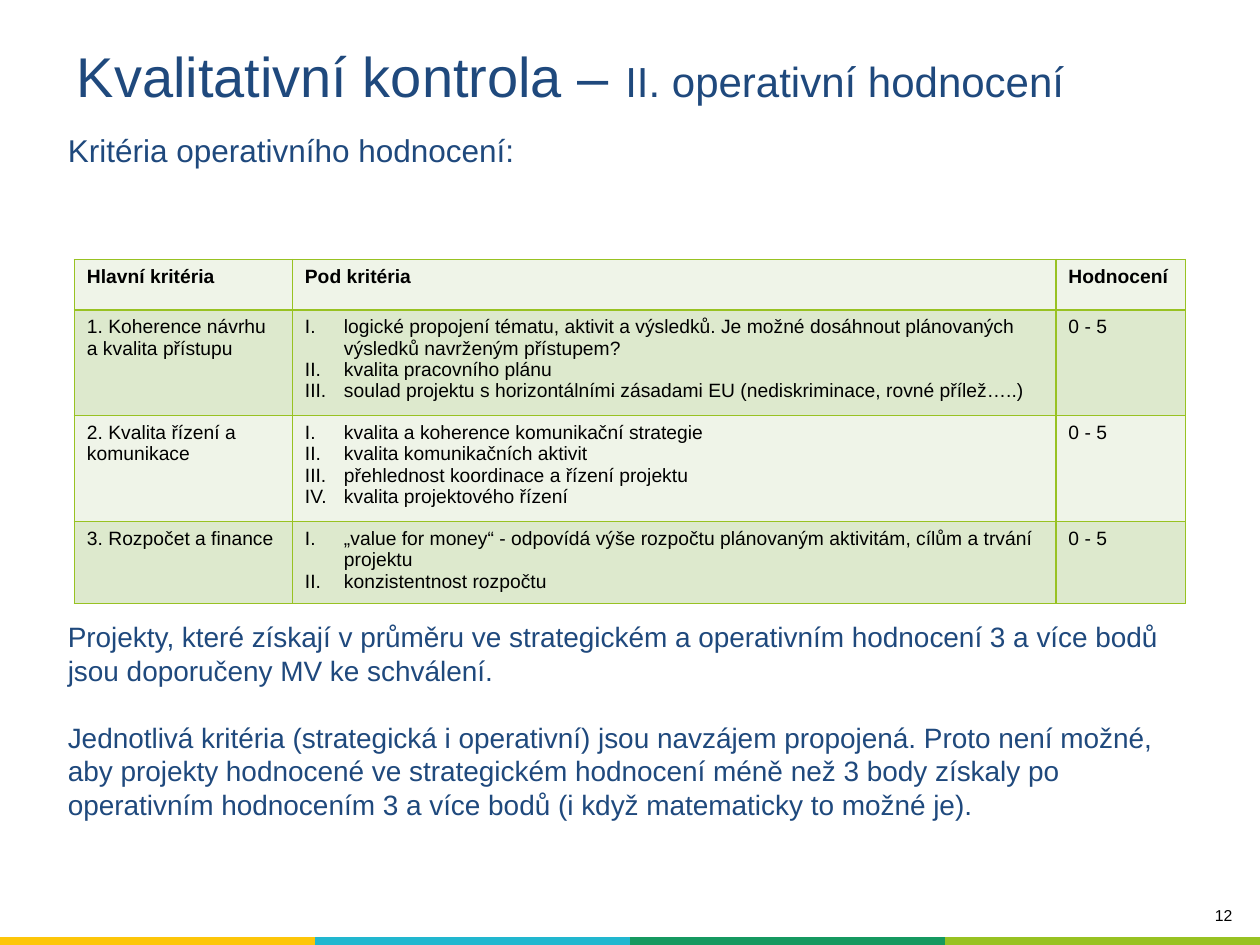
from lxml import etree
from pptx import Presentation
from pptx.dml.color import RGBColor
from pptx.enum import text
from pptx.oxml.ns import qn
from pptx.util import Inches, Pt

BLUE = RGBColor(0x1F, 0x49, 0x7D)
BLACK = RGBColor(0, 0, 0)
LIGHT = RGBColor(0xEF, 0xF4, 0xE8)
GREEN = RGBColor(0xDD, 0xE9, 0xCD)
LIME = RGBColor(0x98, 0xC2, 0x22)
STRIPE = [RGBColor(0xFD, 0xC6, 0x09), RGBColor(0x21, 0xB7, 0xCF),
          RGBColor(0x15, 0x99, 0x60), LIME]
PLAIN = "{2D5ABB26-0587-4C30-8999-92F81FD0307C}"  # no style, no grid

ROWS = [
    ("Hlavní kritéria", ["Pod kritéria"], "Hodnocení"),
    ("1. Koherence návrhu a kvalita přístupu",
     ["logické propojení tématu, aktivit a výsledků. Je možné dosáhnout "
      "plánovaných výsledků navrženým přístupem?",
      "kvalita pracovního plánu",
      "soulad projektu s horizontálními zásadami EU (nediskriminace, "
      "rovné přílež…..)"], "0 - 5"),
    ("2. Kvalita řízení a komunikace",
     ["kvalita a koherence komunikační strategie",
      "kvalita komunikačních aktivit",
      "přehlednost koordinace a řízení projektu",
      "kvalita projektového řízení"], "0 - 5"),
    ("3. Rozpočet a finance",
     ["„value for money“ - odpovídá výše rozpočtu plánovaným aktivitám, "
      "cílům a trvání projektu",
      "konzistentnost rozpočtu"], "0 - 5"),
]
NOTES = [
    "Projekty, které získají v průměru ve strategickém a operativním "
    "hodnocení 3 a více bodů jsou doporučeny MV ke schválení.",
    "Jednotlivá kritéria (strategická i operativní) jsou navzájem propojená. "
    "Proto není možné, aby projekty hodnocené ve strategickém hodnocení méně "
    "než 3 body získaly po operativním hodnocením 3 a více bodů (i když "
    "matematicky to možné je).",
]


def style(font, size, color, bold=False):
    font.name, font.size, font.bold = "Arial", Pt(size), bold
    font.color.rgb = color


def write(frame, lines, size, color, bold=False, roman=False, gap=0):
    """Put one paragraph per line, with Roman numbering if asked."""
    for i, line in enumerate(lines):
        par = frame.paragraphs[0] if i == 0 else frame.add_paragraph()
        par.text = line
        if i:
            par.space_before = Pt(gap)
        if roman:
            props = par._p.get_or_add_pPr()
            props.set("marL", str(Inches(0.31)))
            props.set("indent", str(-Inches(0.31)))
            etree.SubElement(props, qn("a:buFont"), typeface="+mj-lt")
            etree.SubElement(props, qn("a:buAutoNum"), type="romanUcPeriod")
        style(par.font, size, color, bold)


def add_text(slide, box, lines, size, color, gap=0):
    frame = slide.shapes.add_textbox(*map(Inches, box)).text_frame
    frame.word_wrap = True
    write(frame, lines, size, color, gap=gap)
    return frame


def add_grid(slide, left, top, cols, rows):
    """Add a table without a style, sized by its columns and rows."""
    box = map(Inches, (left, top, sum(cols), sum(rows)))
    table = slide.shapes.add_table(len(rows), len(cols), *box).table
    table._tbl.tblPr.find(qn("a:tableStyleId")).text = PLAIN
    for col, width in zip(table.columns, cols):
        col.width = Inches(width)
    for row, height in zip(table.rows, rows):
        row.height = Inches(height)
    return table


def paint(cell, color):
    cell.fill.solid()
    cell.fill.fore_color.rgb = color


def edge(cell, color):
    """Draw a line on all four sides; call it before the fill is set."""
    props = cell._tc.get_or_add_tcPr()
    for side in ("lnL", "lnR", "lnT", "lnB"):
        line = etree.SubElement(props, qn("a:" + side), w=str(Pt(1)))
        fill = etree.SubElement(line, qn("a:solidFill"))
        etree.SubElement(fill, qn("a:srgbClr"), val=str(color))


def add_stripe(slide):
    table = add_grid(slide, 0, 7.44, [2.5] * 4, [0.06])
    for cell, color in zip(table.rows[0].cells, STRIPE):
        cell.margin_top = cell.margin_bottom = 0
        cell.text_frame.paragraphs[0].font.size = Pt(1)
        paint(cell, color)


def add_title(slide):
    title = slide.shapes.title
    title.left, title.top = Inches(0.51), Inches(0.29)
    title.width, title.height = Inches(8.5), Inches(0.61)
    frame = title.text_frame
    frame.auto_size = text.MSO_AUTO_SIZE.NONE
    frame.vertical_anchor = text.MSO_ANCHOR.MIDDLE
    par = frame.paragraphs[0]
    par.alignment = text.PP_ALIGN.LEFT
    for words, size in (("Kvalitativní kontrola – ", 32),
                        ("II. operativní hodnocení", 24)):
        run = par.add_run()
        run.text = words
        style(run.font, size, BLUE)


def add_criteria(slide):
    table = add_grid(slide, 0.59, 2.06, [1.73, 6.06, 1.03],
                     [0.4, 0.84, 0.84, 0.65])
    for r, (main, subs, score) in enumerate(ROWS):
        for c, lines in enumerate(([main], subs, [score])):
            cell = table.cell(r, c)
            edge(cell, LIME)
            paint(cell, GREEN if r % 2 else LIGHT)
            write(cell.text_frame, lines, 11, BLACK, bold=r == 0,
                  roman=r > 0 and c == 1)


def main():
    deck = Presentation()
    deck.slide_width, deck.slide_height = Inches(10), Inches(7.5)
    slide = deck.slides.add_slide(deck.slide_layouts[5])
    add_stripe(slide)
    page = add_text(slide, (7.91, 7.14, 1.97, 0.31), ["12"], 9, BLACK)
    page.paragraphs[0].alignment = text.PP_ALIGN.RIGHT
    add_title(slide)
    add_text(slide, (0.44, 0.99, 8.82, 0.4),
             ["Kritéria operativního hodnocení:"], 18, BLUE)
    add_criteria(slide)
    add_text(slide, (0.44, 4.87, 9.2, 1.99), NOTES, 16, BLUE, gap=19)
    deck.save("out.pptx")


if __name__ == "__main__":
    main()
